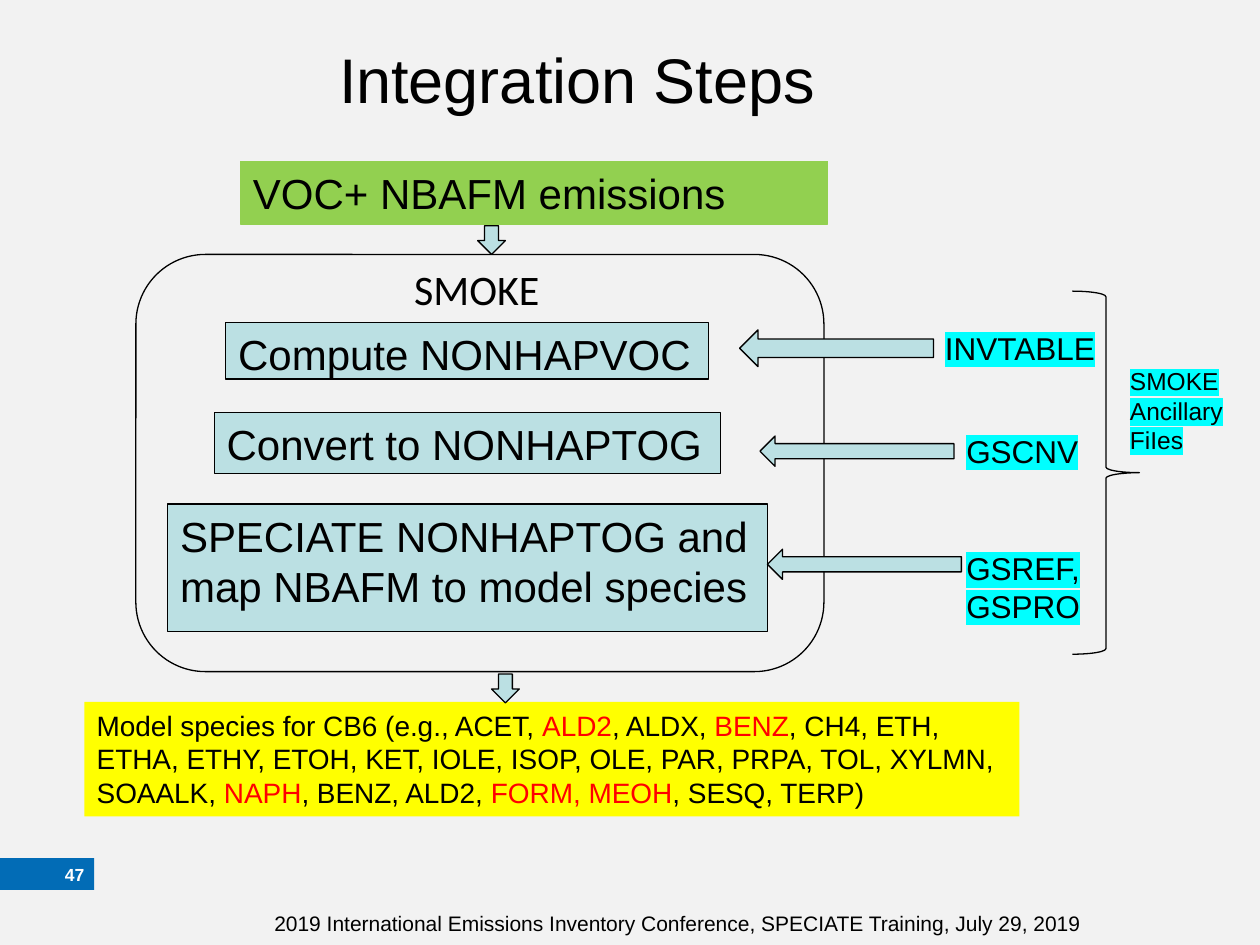
"""Build the Integration Steps slide."""
from lxml import etree
from pptx import Presentation
from pptx.dml.color import RGBColor
from pptx.enum.shapes import MSO_SHAPE
from pptx.enum.text import MSO_ANCHOR, MSO_AUTO_SIZE, PP_ALIGN
from pptx.oxml.ns import qn
from pptx.util import Cm, Pt

RECT, ROUND = MSO_SHAPE.RECTANGLE, MSO_SHAPE.ROUNDED_RECTANGLE
RIGHT, DOWN = MSO_SHAPE.RIGHT_ARROW, MSO_SHAPE.DOWN_ARROW
BRACE = MSO_SHAPE.RIGHT_BRACE
TOP, MIDDLE = MSO_ANCHOR.TOP, MSO_ANCHOR.MIDDLE
FIXED = MSO_AUTO_SIZE.NONE
LEFT, END = PP_ALIGN.LEFT, PP_ALIGN.RIGHT

BLACK, WHITE, RED = "000000", "FFFFFF", "FF0000"
PALE, GREEN, YELLOW = "BBE0E3", "92D050", "FFFF00"
CYAN, BLUE, GREY = "00FFFF", "026CB6", "F2F2F2"

TITLE = ("Integration Steps", (6.58, 0.69, 12.9, 1.8))
STEPS = [
    ("VOC+ NBAFM emissions", (4.85, 3.25, 11.84, 1.27), GREEN, GREEN),
    ("Compute NONHAPVOC", (4.55, 6.5, 9.73, 1.14), PALE, BLACK),
    ("Convert to NONHAPTOG", (4.32, 8.31, 10.21, 1.24), PALE, BLACK),
    ("SPECIATE NONHAPTOG and map NBAFM to model species",
     (3.38, 10.16, 12.09, 2.57), PALE, BLACK),
]
SPECIES = [
    ("Model species for CB6 (e.g., ACET, ", BLACK), ("ALD2", RED),
    (", ALDX, ", BLACK), ("BENZ", RED),
    (", CH4, ETH, ETHA, ETHY, ETOH, KET, IOLE, ISOP, OLE, PAR, PRPA, "
     "TOL, XYLMN, SOAALK, ", BLACK), ("NAPH", RED),
    (", BENZ, ALD2, ", BLACK), ("FORM, MEOH", RED),
    (", SESQ, TERP)", BLACK),
]
INPUTS = [
    ("INVTABLE", (18.8, 6.5, 4.01, 1.02), (14.91, 6.65, 3.91, 0.74)),
    ("GSCNV", (19.23, 8.59, 4.01, 1.02), (15.32, 8.79, 3.91, 0.61)),
    ("GSREF, GSPRO", (19.23, 10.95, 4.01, 1.8), (15.47, 11.07, 3.91, 0.61)),
]
DROPS = [(9.63, 4.55, 0.56, 0.58), (9.91, 13.59, 0.56, 0.58)]
FOOTER = "2019 International Emissions Inventory Conference, SPECIATE Training, July 29, 2019"


def paint(fmt, tone):
    """Give a fill or a line one colour, or none."""
    fill = fmt.fill if hasattr(fmt, "fill") else fmt
    if tone:
        fill.solid()
        fill.fore_color.rgb = RGBColor.from_string(tone)
    else:
        fill.background()


def style(run, size, tone=BLACK, face="Arial", mark=None, bold=False):
    """Set the look of a run."""
    font = run.font
    font.size, font.name, font.bold = Pt(size), face, bold
    font.color.rgb = RGBColor.from_string(tone)
    if mark:
        light = etree.Element(qn("a:highlight"))
        etree.SubElement(light, qn("a:srgbClr"), val=mark)
        run._r.rPr.find(qn("a:solidFill")).addnext(light)


def write(shape, text, size, align=LEFT, anchor=TOP, **look):
    """Fill a shape with text in one style."""
    frame = shape.text_frame
    frame.text = text
    frame.word_wrap, frame.auto_size = True, FIXED
    frame.vertical_anchor = anchor
    for para in frame.paragraphs:
        para.alignment = align
        for run in para.runs:
            style(run, size, **look)


def draw(slide, kind, box, fill=None, line=BLACK):
    """Add a flat preset shape."""
    shape = slide.shapes.add_shape(kind, *map(Cm, box))
    shape.shadow.inherit = False
    paint(shape.fill, fill)
    paint(shape.line, line)
    if line:
        shape.line.width = Pt(0.75)
    return shape


def label(slide, text, box, size, **look):
    """Add a text box."""
    write(slide.shapes.add_textbox(*map(Cm, box)), text, size, **look)


def main():
    """Build and save the slide."""
    deck = Presentation()
    deck.slide_width, deck.slide_height = Cm(25.4), Cm(19.05)
    slide = deck.slides.add_slide(deck.slide_layouts[5])
    paint(slide.background.fill, GREY)

    text, box = TITLE
    title = slide.shapes.title
    title.left, title.top, title.width, title.height = map(Cm, box)
    write(title, text, 36)

    badge = draw(slide, RECT, (0, 17.3, 1.9, 0.64), BLUE, None)
    write(badge, "47", 10, END, MIDDLE, tone=WHITE, bold=True)
    frame = badge.text_frame
    frame.margin_left = frame.margin_top = frame.margin_bottom = 0
    frame.margin_right = Cm(0.2)

    for text, box, fill, line in STEPS:
        write(draw(slide, RECT, box, fill, line), text, 24)

    model = draw(slide, RECT, (1.7, 14.15, 18.85, 2.31), YELLOW, None)
    write(model, "", 16)
    for text, tone in SPECIES:
        run = model.text_frame.paragraphs[0].add_run()
        run.text = text
        style(run, 16, tone)

    draw(slide, ROUND, (2.74, 5.13, 13.87, 8.41))
    label(slide, "SMOKE", (8.1, 5.18, 8.59, 1.27), 24, face="Calibri")
    for text, box, arrow in INPUTS:
        draw(slide, RIGHT, arrow, PALE).rotation = 180
        label(slide, text, box, 18, mark=CYAN)
    for box in DROPS:
        draw(slide, DOWN, box, PALE)

    label(slide, FOOTER, (5.28, 18.24, 17.15, 1.27), 12)
    label(slide, "SMOKE Ancillary\nFiIes", (22.53, 7.26, 3.38, 2.06), 14, mark=CYAN)
    draw(slide, BRACE, (21.62, 5.87, 1.35, 7.32))
    deck.save("out.pptx")


if __name__ == "__main__":
    main()
